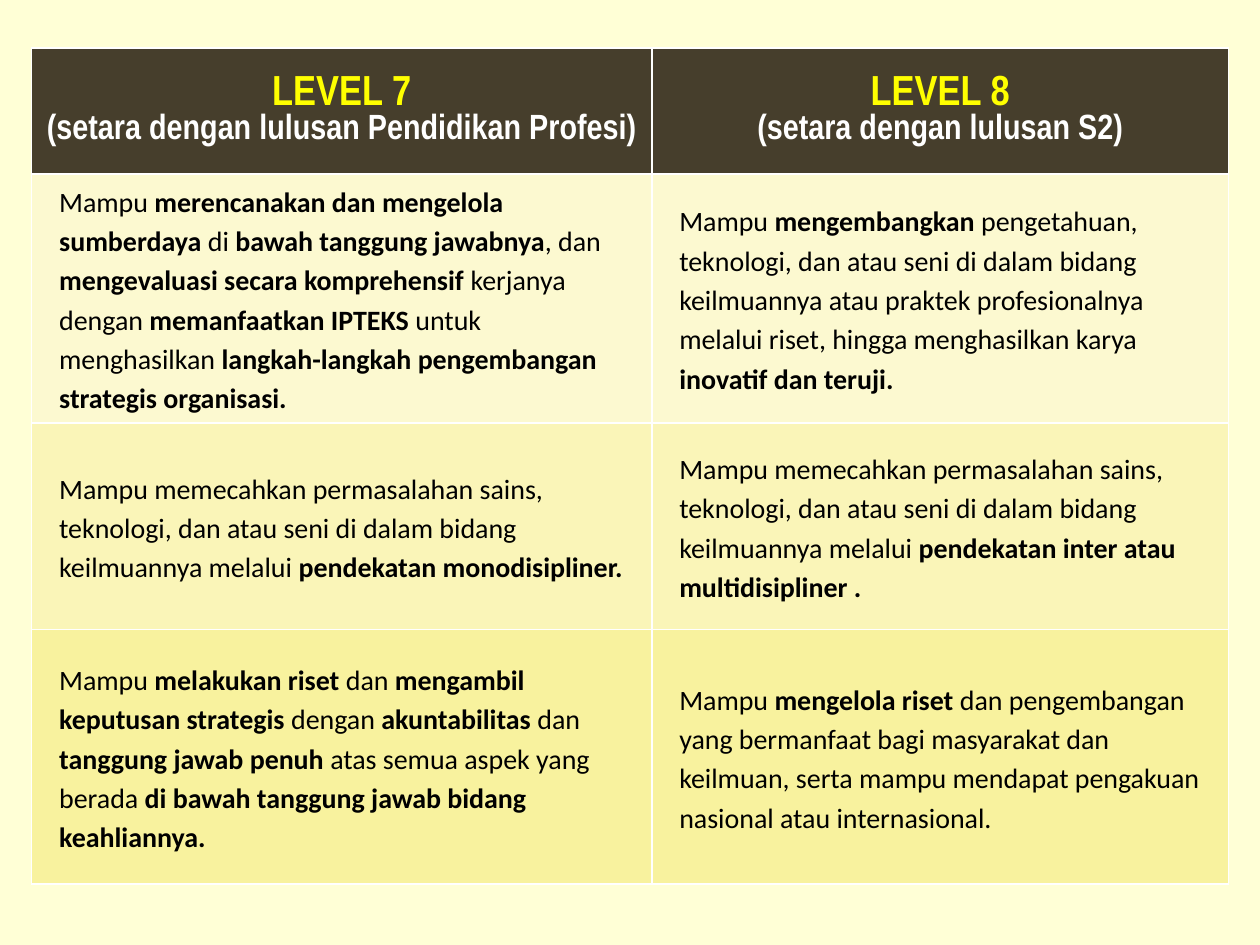
from lxml import etree
from pptx import Presentation
from pptx.dml.color import RGBColor
from pptx.enum.text import MSO_ANCHOR, PP_ALIGN
from pptx.oxml.ns import qn
from pptx.util import Cm, Pt

MIDDLE = MSO_ANCHOR.MIDDLE
CENTER, LEFT = PP_ALIGN.CENTER, PP_ALIGN.LEFT
BLANK_LAYOUT = 6

COLUMN_WIDTHS = (12.5, 11.63)
ROW_HEIGHTS = (2.54, 4.95, 4.17, 5.13)
ROW_FILLS = ("463E2C", "FCF9D0", "FAF5B8", "F8F29E")

HEADINGS = (
    ("LEVEL 7", "(setara dengan lulusan Pendidikan Profesi)"),
    ("LEVEL 8", "(setara dengan lulusan S2)"),
)
# Asterisks enclose the bold passages
ABILITIES = (
    ("Mampu *merencanakan dan mengelola sumberdaya *di *bawah tanggung jawabnya*, dan "
     "*mengevaluasi secara komprehensif *kerjanya dengan *memanfaatkan IPTEKS *untuk "
     "menghasilkan *langkah-langkah pengembangan strategis organisasi.*",
     "Mampu *mengembangkan *pengetahuan, teknologi, dan atau seni di dalam bidang "
     "keilmuannya atau praktek profesionalnya melalui riset, hingga menghasilkan karya "
     "*inovatif dan teruji.*"),
    ("Mampu memecahkan permasalahan sains, teknologi, dan atau seni di dalam bidang "
     "keilmuannya melalui *pendekatan monodisipliner.*",
     "Mampu memecahkan permasalahan sains, teknologi, dan atau seni di dalam bidang "
     "keilmuannya melalui *pendekatan inter atau multidisipliner .*"),
    ("Mampu *melakukan riset *dan *mengambil keputusan strategis *dengan *akuntabilitas "
     "*dan *tanggung jawab penuh *atas semua aspek yang berada *di bawah tanggung jawab "
     "bidang keahliannya.*",
     "Mampu *mengelola riset *dan pengembangan yang bermanfaat bagi masyarakat dan "
     "keilmuan, serta mampu mendapat pengakuan nasional atau internasional."),
)

LEVEL_FORMAT = {"name": "Arial Narrow", "size": Pt(24), "bold": True}
EQUIVALENT_FORMAT = {"name": "Arial Narrow", "size": Pt(20), "bold": True}
ABILITY_FORMAT = {"name": "Calibri", "size": Pt(16)}
ABILITY_PARAGRAPH = {"alignment": LEFT, "line_spacing": 1.15, "space_after": Pt(10)}


def set_attributes(target, values):
    for key, value in values.items():
        setattr(target, key, value)


def paint(color_format, hex_color):
    color_format.rgb = RGBColor.from_string(hex_color)


def fill_solid(fill, hex_color):
    fill.solid()
    paint(fill.fore_color, hex_color)


def add_run(paragraph, text, font_values, hex_color):
    run = paragraph.add_run()
    run.text = text
    set_attributes(run.font, font_values)
    paint(run.font.color, hex_color)


def style_cell(cell, hex_color):
    cell.vertical_anchor = MIDDLE
    properties = cell._tc.get_or_add_tcPr()
    for side in ("lnL", "lnR", "lnT", "lnB"):
        border = etree.SubElement(properties, qn(f"a:{side}"), w=str(Pt(1)))
        solid = etree.SubElement(border, qn("a:solidFill"))
        etree.SubElement(solid, qn("a:srgbClr"), val="FFFFFF")
    fill_solid(cell.fill, hex_color)


def write_heading(cell, level, equivalent):
    level_line = cell.text_frame.paragraphs[0]
    equivalent_line = cell.text_frame.add_paragraph()
    add_run(level_line, level, LEVEL_FORMAT, "FFFF00")
    add_run(equivalent_line, equivalent, EQUIVALENT_FORMAT, "FFFFFF")
    for line in (level_line, equivalent_line):
        line.alignment = CENTER


def write_ability(cell, marked_text):
    paragraph = cell.text_frame.paragraphs[0]
    set_attributes(paragraph, ABILITY_PARAGRAPH)
    indent = paragraph._p.get_or_add_pPr()
    indent.set("marL", str(Cm(0.3)))
    indent.set("indent", "0")
    for index, passage in enumerate(marked_text.split("*")):
        if passage:
            add_run(paragraph, passage, {**ABILITY_FORMAT, "bold": index % 2 == 1}, "000000")


def add_level_table(slide, left, top):
    frame = slide.shapes.add_table(
        len(ROW_HEIGHTS), len(COLUMN_WIDTHS), left, top,
        Cm(sum(COLUMN_WIDTHS)), Cm(sum(ROW_HEIGHTS)))
    levels = frame.table
    for column, width in zip(levels.columns, COLUMN_WIDTHS):
        column.width = Cm(width)
    for row, height, row_fill in zip(levels.rows, ROW_HEIGHTS, ROW_FILLS):
        row.height = Cm(height)
        for cell in row.cells:
            style_cell(cell, row_fill)

    # Heading row
    for column, heading in enumerate(HEADINGS):
        write_heading(levels.cell(0, column), *heading)
    # Ability rows
    for row, abilities in enumerate(ABILITIES, start=1):
        for column, ability in enumerate(abilities):
            write_ability(levels.cell(row, column), ability)


def main():
    presentation = Presentation()
    presentation.slide_width, presentation.slide_height = Cm(25.4), Cm(19.05)
    slide = presentation.slides.add_slide(presentation.slide_layouts[BLANK_LAYOUT])
    fill_solid(slide.background.fill, "FFFFD6")
    add_level_table(slide, Cm(0.64), Cm(0.97))
    presentation.save("out.pptx")


if __name__ == "__main__":
    main()
